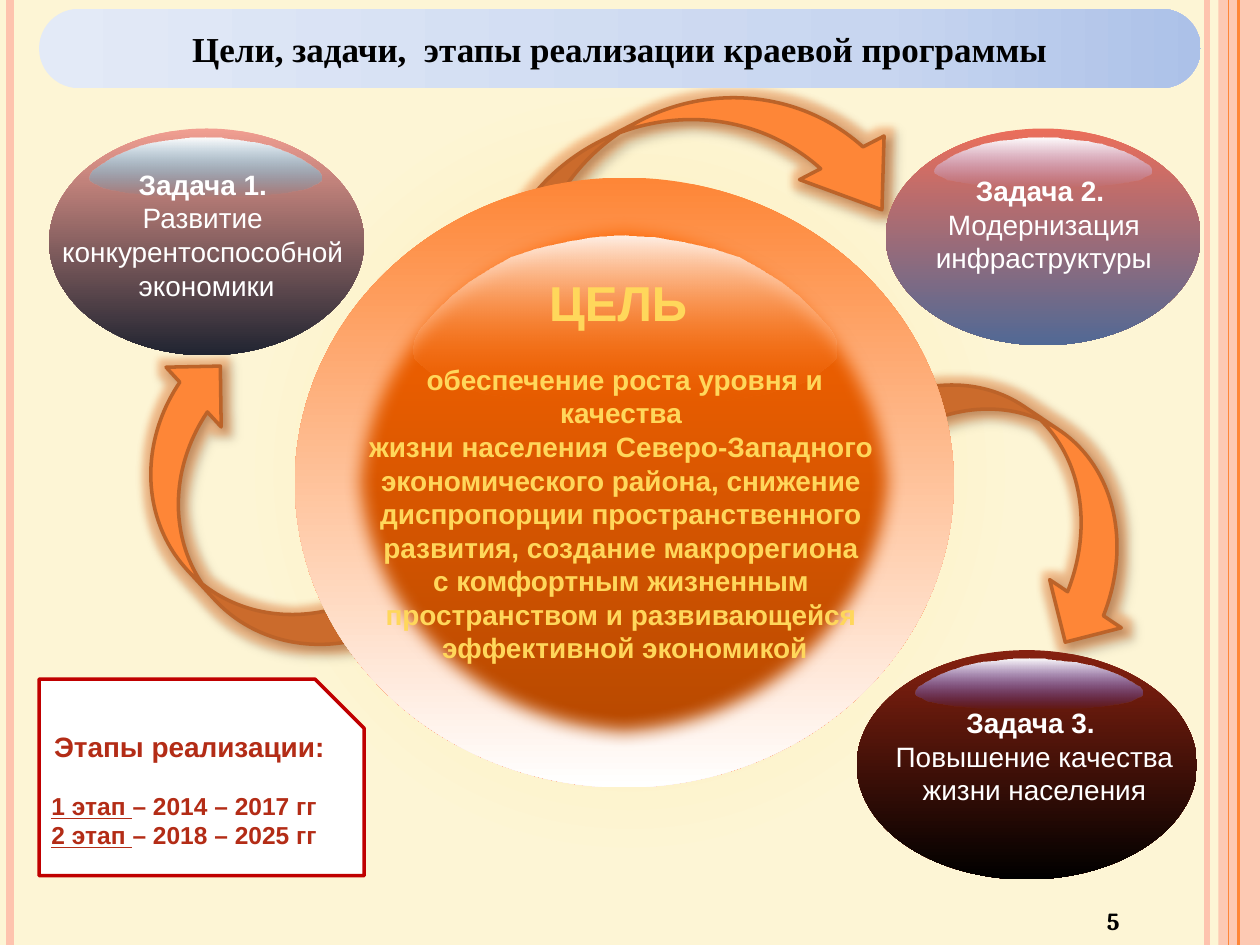
from pptx import Presentation
from pptx.dml.color import RGBColor
from pptx.enum.shapes import MSO_CONNECTOR, MSO_SHAPE
from pptx.enum.text import MSO_ANCHOR, PP_ALIGN
from pptx.oxml import parse_xml
from pptx.oxml.ns import nsdecls, qn
from pptx.util import Inches, Pt
from lxml.etree import SubElement

COLORS = {
    "cream": "FDF5D5", "sand": "FBEBAB", "peach": "FEC3AE", "orange": "FE8637",
    "rust": "BC6329", "white": "FFFFFF", "black": "000000", "gold": "FFD75B",
    "flame": "FF6600", "ember": "B54800", "coral": "EB6E5A", "slate": "516995",
    "rose": "F19E91", "ink": "202431", "maroon": "862110", "lilac": "B3B3FF",
    "sky": "00B0F0", "violet": "3B3BFB", "ice": "E3EAF7", "mist": "C8D6F0",
    "blue": "ACC1E8", "red": "C00000", "brick": "B32C16",
}
RGB = {name: RGBColor.from_string(value) for name, value in COLORS.items()}
DOWN = '<a:lin ang="5400000" scaled="0"/>'
ACROSS = '<a:lin ang="0" scaled="0"/>'
RADIAL = '<a:path path="circle"><a:fillToRect l="50000" t="50000" r="50000" b="50000"/></a:path>'


def gradient(parent, stops, direction=DOWN):
    """Replace the solid fill in parent by (position, colour, opacity) stops."""
    marks = "".join(
        f'<a:gs pos="{pos * 1000}"><a:srgbClr val="{COLORS[c]}">'
        f'<a:alpha val="{alpha * 1000}"/></a:srgbClr></a:gs>' for pos, c, alpha in stops)
    parent.replace(parent.find(qn("a:solidFill")), parse_xml(
        f'<a:gradFill {nsdecls("a")} rotWithShape="1"><a:gsLst>{marks}</a:gsLst>{direction}</a:gradFill>'))


def write(tf, text, size=16, color="white", font="Arial", bold=True,
          align=PP_ALIGN.CENTER, before=0, lead=""):
    """Add one paragraph, with an optional underlined lead."""
    p = tf.paragraphs[0] if not tf.text else tf.add_paragraph()
    p.alignment = align
    p.space_before = Pt(before)
    for part in filter(None, (lead, text)):
        r = p.add_run()
        r.text = part
        r.font.size, r.font.name, r.font.bold = Pt(size), font, bold
        r.font.color.rgb = RGB[color]
        if part == lead:
            r.font.underline = True


prs = Presentation()
prs.slide_width, prs.slide_height = Inches(10), Inches(7.5)
U = prs.slide_width / 100  # square grid cell: 100 columns by 75 rows
s = prs.slides.add_slide(prs.slide_layouts[6])
shapes = s.shapes

# Background
s.background.fill.solid()
s.background.fill.fore_color.rgb = RGB["cream"]
gradient(s._element.find(".//" + qn("p:bgPr")),
         [(0, "sand", 100), (50, "cream", 100), (100, "cream", 100)], RADIAL)

# Side stripes
band = shapes.add_shape(MSO_SHAPE.RECTANGLE, *(int(v * U) for v in (96.7, 0, 3.3, 75)))
band.shadow.inherit = False
band.fill.solid()
band.fill.fore_color.rgb = RGB["peach"]
SubElement(band._element.spPr.find(".//" + qn("a:srgbClr")), qn("a:alpha"), val="87000")
band.line.fill.background()
for col, color, width in [(95.8, "peach", 3), (0.8, "peach", 4.5),
                          (98.3, "orange", 1.5), (97.5, "orange", 0.75)]:
    line = shapes.add_connector(MSO_CONNECTOR.STRAIGHT, int(col * U), 0,
                                int(col * U), prs.slide_height)
    line.line.color.rgb = RGB[color]
    line.line.width = Pt(width)
    SubElement(line._element.spPr, qn("a:effectLst"))

# Curved arrows
for box, turn, head in [((45.9, -1.8, 15.1, 37), 242.7, 0.34),
                        ((13.7, 27.3, 12.9, 28.3), 137.3, 0.25),
                        ((72.7, 25.3, 13.7, 28.1), 303.9, 0.25)]:
    arrow = shapes.add_shape(MSO_SHAPE.CURVED_LEFT_ARROW, *(int(v * U) for v in box))
    arrow.rotation = turn
    arrow.adjustments[2] = head
    arrow.fill.solid()
    arrow.fill.fore_color.rgb = RGB["orange"]
    arrow.line.color.rgb = RGB["rust"]
    arrow.line.width = Pt(2)
    arrow.shadow.inherit = False
    effects = arrow._element.spPr.find(qn("a:effectLst"))
    effects.append(parse_xml(
        f'<a:glow {nsdecls("a")} rad="101600"><a:srgbClr val="{COLORS["orange"]}">'
        '<a:alpha val="40000"/></a:srgbClr></a:glow>'))
    effects.append(parse_xml(
        f'<a:outerShdw {nsdecls("a")} blurRad="50800" dist="38100" dir="2700000">'
        f'<a:srgbClr val="{COLORS["black"]}"><a:alpha val="40000"/></a:srgbClr></a:outerShdw>'))

# Ovals with glossy highlights; the gloss is mirrored about its middle, in percent
HALF = [(0, 0), (7, 1), (14, 4), (21, 8), (27, 13), (32, 20), (37, 28), (41, 36),
        (45, 46), (48.5, 56), (49.7, 62), (50, 68), (49.7, 73), (48, 77), (46, 81),
        (44, 85), (40, 89), (37, 91), (33, 94), (28, 96), (23, 98), (18, 99), (12, 100)]
GLOSS = HALF + [(-x, y) for x, y in reversed(HALF)]
OVALS = [  # box, top, bottom, soft edge in points, gloss box, gloss colour, opacity
    ((23.4, 14.1, 52.3, 48.4), "orange", "white", 0, None, None, 0),
    ((27.3, 17.2, 44.5, 42.2), "flame", "ember", 10, (32.8, 18.7, 33.6, 13.3), "flame", 89),
    ((70.3, 10.2, 25, 17.2), "coral", "slate", 0, (74.2, 10.9, 17.2, 3.9), "lilac", 100),
    ((3.9, 10.2, 25, 18), "rose", "ink", 0, (7.1, 10.9, 18.4, 4.7), "sky", 100),
    ((68, 51.6, 27, 18.2), "maroon", "black", 0, (72.7, 52.3, 18, 3.9), "violet", 100),
]
for box, top, bottom, soft, gloss_box, tint, opacity in OVALS:
    layers = [(shapes.add_shape(MSO_SHAPE.OVAL, *(int(v * U) for v in box)),
               [(0, top, 100), (100, bottom, 100)])]
    if gloss_box:
        x, y, w, h = gloss_box
        points = [(int((x + w * (50 + px) / 100) * U), int((y + h * py / 100) * U))
                  for px, py in GLOSS]
        fb = shapes.build_freeform(*points[0], scale=1.0)
        fb.add_line_segments(points[1:], close=True)
        layers.append((fb.convert_to_shape(), [(0, "white", opacity), (100, tint, 0)]))
    for sp, stops in layers:
        sp.shadow.inherit = False
        sp.fill.solid()
        sp.line.fill.background()
        gradient(sp._element.spPr, stops)
    if soft:
        SubElement(layers[0][0]._element.spPr.find(qn("a:effectLst")),
                   qn("a:softEdge"), rad=str(Pt(soft)))

# Title bar
bar = shapes.add_shape(MSO_SHAPE.ROUNDED_RECTANGLE, *(int(v * U) for v in (3.1, 0.7, 92.2, 6.3)))
bar.adjustments[0] = 0.5
bar.shadow.inherit = False
bar.fill.solid()
bar.line.fill.background()
gradient(bar._element.spPr, [(0, "ice", 100), (72, "mist", 100), (100, "blue", 100)], ACROSS)
bar.text_frame.word_wrap = False
bar.text_frame.vertical_anchor = MSO_ANCHOR.MIDDLE
write(bar.text_frame, "Цели, задачи,  этапы реализации краевой программы",
      size=20, color="black", font="Times New Roman")

# Goal, tasks and page number
GOAL = ["обеспечение роста уровня и качества ", "жизни населения Северо-Западного ",
        "экономического района, снижение ", "диспропорции пространственного ",
        "развития, создание макрорегиона ", "с комфортным жизненным ",
        "пространством и развивающейся ", "эффективной экономикой"]
gold, plain = {"color": "gold"}, {"bold": False}
TEXTS = [
    ((28.1, 21.1, 43, 32.7), [("ЦЕЛЬ ", {"size": 28, **gold}), (GOAL[0], {"before": 18, **gold})]
     + [(t, gold) for t in GOAL[1:]]),
    ((3.9, 12.8, 25, 13.6), [("Задача 1. ", {}), ("Развитие ", plain),
                             ("конкурентоспособной ", plain), ("экономики", plain)]),
    ((68.8, 13.3, 28.1, 9.1), [("Задача 2. ", {}), ("Модернизация инфраструктуры", plain)]),
    ((68.8, 55.5, 26.6, 10.8), [("Задача 3. ", {}),
                                ("Повышение качества жизни населения", plain)]),
    ((76.7, 71.4, 23.3, 3.3), [("5", {"size": 14, "color": "black", "font": "Cambria"})]),
]
for box, lines in TEXTS:
    tf = shapes.add_textbox(*(int(v * U) for v in box)).text_frame
    tf.word_wrap = True
    for text, style in lines:
        write(tf, text, **style)

# Stages card
card = shapes.add_shape(MSO_SHAPE.SNIP_1_RECTANGLE, *(int(v * U) for v in (3.1, 53.9, 25.8, 15.6)))
card.adjustments[0] = 0.25
card.shadow.inherit = False
card.fill.solid()
card.fill.fore_color.rgb = RGB["white"]
card.line.color.rgb = RGB["red"]
card.line.width = Pt(2)
tf = card.text_frame
tf.word_wrap = True
tf.vertical_anchor = MSO_ANCHOR.MIDDLE
write(tf, "Этапы реализации:", color="brick")
for lead, years, gap in [("1 этап ", "– 2014 – 2017 гг", 16), ("2 этап ", "– 2018 – 2025 гг", 0)]:
    write(tf, years, lead=lead, size=14, color="brick", align=PP_ALIGN.LEFT, before=gap)

prs.save("out.pptx")
